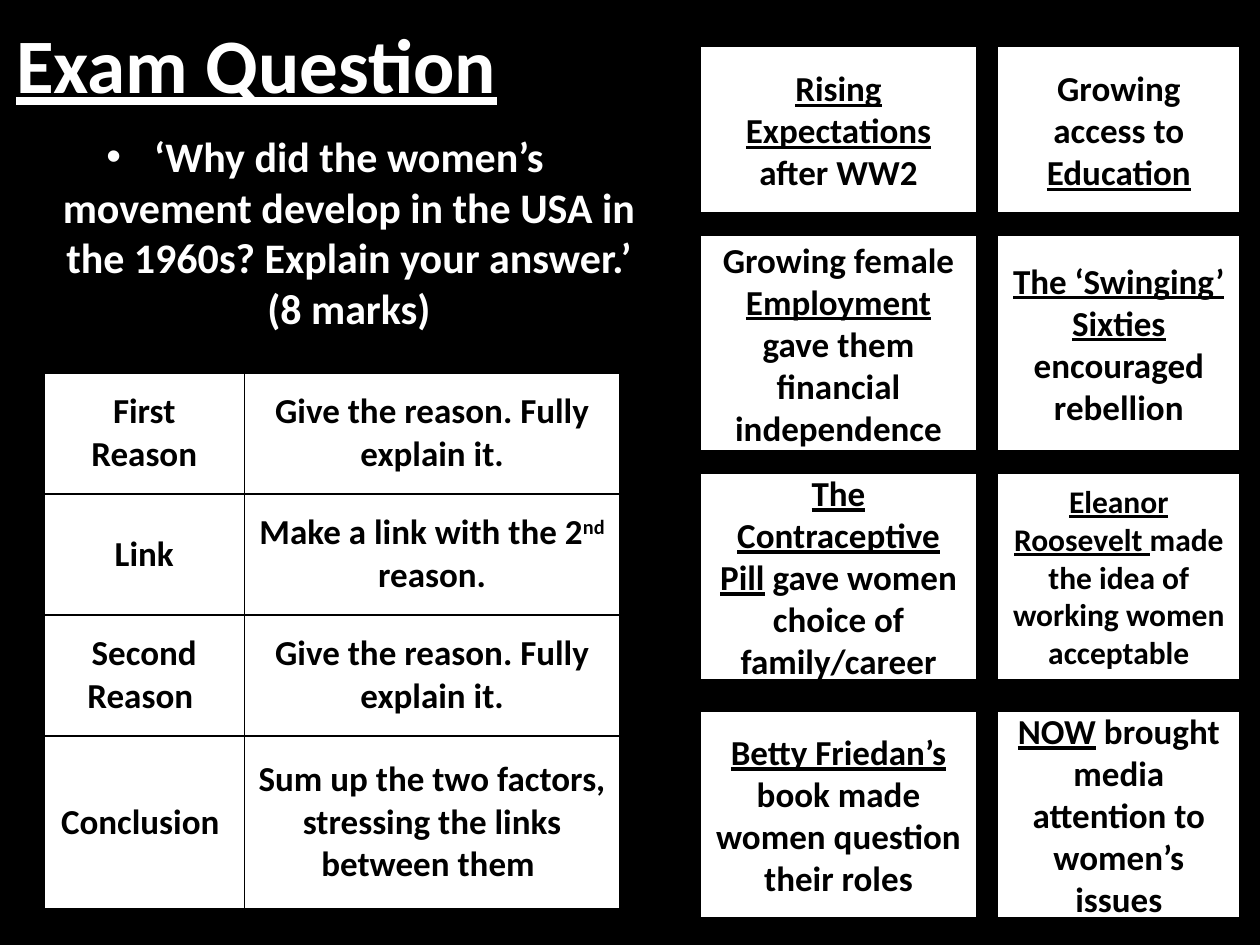
import pptx
import pptx.chart.data
import pptx.dml.color
import pptx.enum.shapes
import pptx.enum.text
import pptx.oxml
import pptx.oxml.ns
import pptx.util

Inches = pptx.util.Inches
Pt = pptx.util.Pt
CENTER = pptx.enum.text.PP_ALIGN.CENTER
MIDDLE = pptx.enum.text.MSO_ANCHOR.MIDDLE

BLACK = pptx.dml.color.RGBColor(0x00, 0x00, 0x00)
WHITE = pptx.dml.color.RGBColor(0xFF, 0xFF, 0xFF)
FONT = "Calibri"

PLAIN, UNDERLINED, RAISED = "plain", "underlined", "raised"

# Each factor card: text size and its spans, two cards to a row
CARD_LEFTS = (5.55, 7.91)
CARD_WIDTHS = (2.21, 1.94)
CARD_ROWS = (  # top, height
    (0.36, 1.34),
    (1.86, 1.73),
    (3.75, 1.65),
    (5.64, 1.65),
)
CARDS = (
    (20, [("Rising Expectations ", UNDERLINED), ("after WW2", PLAIN)]),
    (20, [("Growing access to ", PLAIN), ("Education", UNDERLINED)]),
    (20, [("Growing female ", PLAIN), ("Employment ", UNDERLINED),
          ("gave them financial independence", PLAIN)]),
    (20, [("The ‘Swinging’ Sixties ", UNDERLINED),
          ("encouraged rebellion", PLAIN)]),
    (20, [("The Contraceptive Pill", UNDERLINED),
          (" gave women choice of family/career", PLAIN)]),
    (18, [("Eleanor Roosevelt ", UNDERLINED),
          ("made the idea of working women acceptable", PLAIN)]),
    (20, [("Betty Friedan’s ", UNDERLINED),
          ("book made women question their roles", PLAIN)]),
    (20, [("NOW", UNDERLINED),
          (" brought media attention to women’s issues", PLAIN)]),
)

GIVE_REASON = [("Give the reason. Fully explain it.", PLAIN)]
PLAN_COLUMNS = (1.59, 2.98)
PLAN_ROWS = (  # height, step, advice
    (0.96, "First Reason", GIVE_REASON),
    (0.96, "Link", [("Make a link with the 2", PLAIN), ("nd", RAISED),
                    (" reason.", PLAIN)]),
    (0.96, "Second Reason ", GIVE_REASON),
    (1.37, "Conclusion ",
     [("Sum up the two factors, stressing the links between them ", PLAIN)]),
)


def write_spans(para, spans, size, color):
    for text, style in spans:
        span = para.add_run()
        span.text = text
        span.font.name = FONT
        span.font.size = Pt(size)
        span.font.bold = True
        span.font.color.rgb = color
        if style == UNDERLINED:
            span.font.underline = True
        elif style == RAISED:
            span._r.get_or_add_rPr().set("baseline", "30000")


def add_text(page, left, top, width, height, spans, size):
    box = page.shapes.add_textbox(
        Inches(left), Inches(top), Inches(width), Inches(height))
    box.text_frame.word_wrap = True
    write_spans(box.text_frame.paragraphs[0], spans, size, WHITE)
    return box


def add_bullet(para, indent):
    props = para._p.get_or_add_pPr()
    props.set("marL", str(Inches(indent)))
    props.set("indent", str(-Inches(indent)))
    namespaces = pptx.oxml.ns.nsdecls("a")
    props.append(pptx.oxml.parse_xml(
        f'<a:buFont {namespaces} typeface="Arial"/>'))
    props.append(pptx.oxml.parse_xml(f'<a:buChar {namespaces} char="•"/>'))


def add_card(page, left, top, width, height, spans, size):
    card = page.shapes.add_shape(
        pptx.enum.shapes.MSO_SHAPE.RECTANGLE,
        Inches(left), Inches(top), Inches(width), Inches(height))
    card.shadow.inherit = False
    card.fill.solid()
    card.fill.fore_color.rgb = WHITE
    card.line.color.rgb = BLACK
    card.line.width = Pt(2)
    card.text_frame.word_wrap = True
    card.text_frame.vertical_anchor = MIDDLE
    para = card.text_frame.paragraphs[0]
    para.alignment = CENTER
    write_spans(para, spans, size, BLACK)


def set_borders(cell):
    props = cell._tc.get_or_add_tcPr()
    for side in ("lnL", "lnR", "lnT", "lnB"):
        props.append(pptx.oxml.parse_xml(
            f'<a:{side} {pptx.oxml.ns.nsdecls("a")} w="{Pt(1)}">'
            f'<a:solidFill><a:srgbClr val="{BLACK}"/></a:solidFill>'
            f'</a:{side}>'))


def fill_cell(cell, spans):
    set_borders(cell)
    cell.fill.solid()
    cell.fill.fore_color.rgb = WHITE
    cell.vertical_anchor = MIDDLE
    para = cell.text_frame.paragraphs[0]
    para.alignment = CENTER
    write_spans(para, spans, 20, BLACK)


def add_plan_table(page, left, top):
    height = sum(row[0] for row in PLAN_ROWS)
    table = page.shapes.add_table(
        len(PLAN_ROWS), len(PLAN_COLUMNS), Inches(left), Inches(top),
        Inches(sum(PLAN_COLUMNS)), Inches(height)).table
    table.first_row = False
    table.horz_banding = False
    for column, width in zip(table.columns, PLAN_COLUMNS):
        column.width = Inches(width)
    for row, (row_height, step, advice) in zip(table.rows, PLAN_ROWS):
        row.height = Inches(row_height)
        for cell, spans in zip(row.cells, ([(step, PLAIN)], advice)):
            fill_cell(cell, spans)


def main():
    deck = pptx.Presentation()
    deck.slide_width = Inches(10)
    deck.slide_height = Inches(7.5)
    page = deck.slides.add_slide(deck.slide_layouts[6])
    page.background.fill.solid()
    page.background.fill.fore_color.rgb = BLACK

    title = add_text(page, 0.03, 0, 9, 0.99,
                     [("Exam Question", UNDERLINED)], 44)
    title.text_frame.vertical_anchor = MIDDLE

    question = add_text(
        page, 0, 0.99, 5.16, 6.35,
        [("‘Why did the women’s movement develop in the USA in the 1960s? "
          "Explain your answer.’ (8 marks)", PLAIN)], 24)
    para = question.text_frame.paragraphs[0]
    para.alignment = CENTER
    add_bullet(para, 0.38)

    add_plan_table(page, 0.35, 2.96)

    for index, (size, spans) in enumerate(CARDS):
        row, column = divmod(index, len(CARD_LEFTS))
        top, height = CARD_ROWS[row]
        add_card(page, CARD_LEFTS[column], top, CARD_WIDTHS[column], height,
                 spans, size)

    deck.save("out.pptx")


if __name__ == "__main__":
    main()
